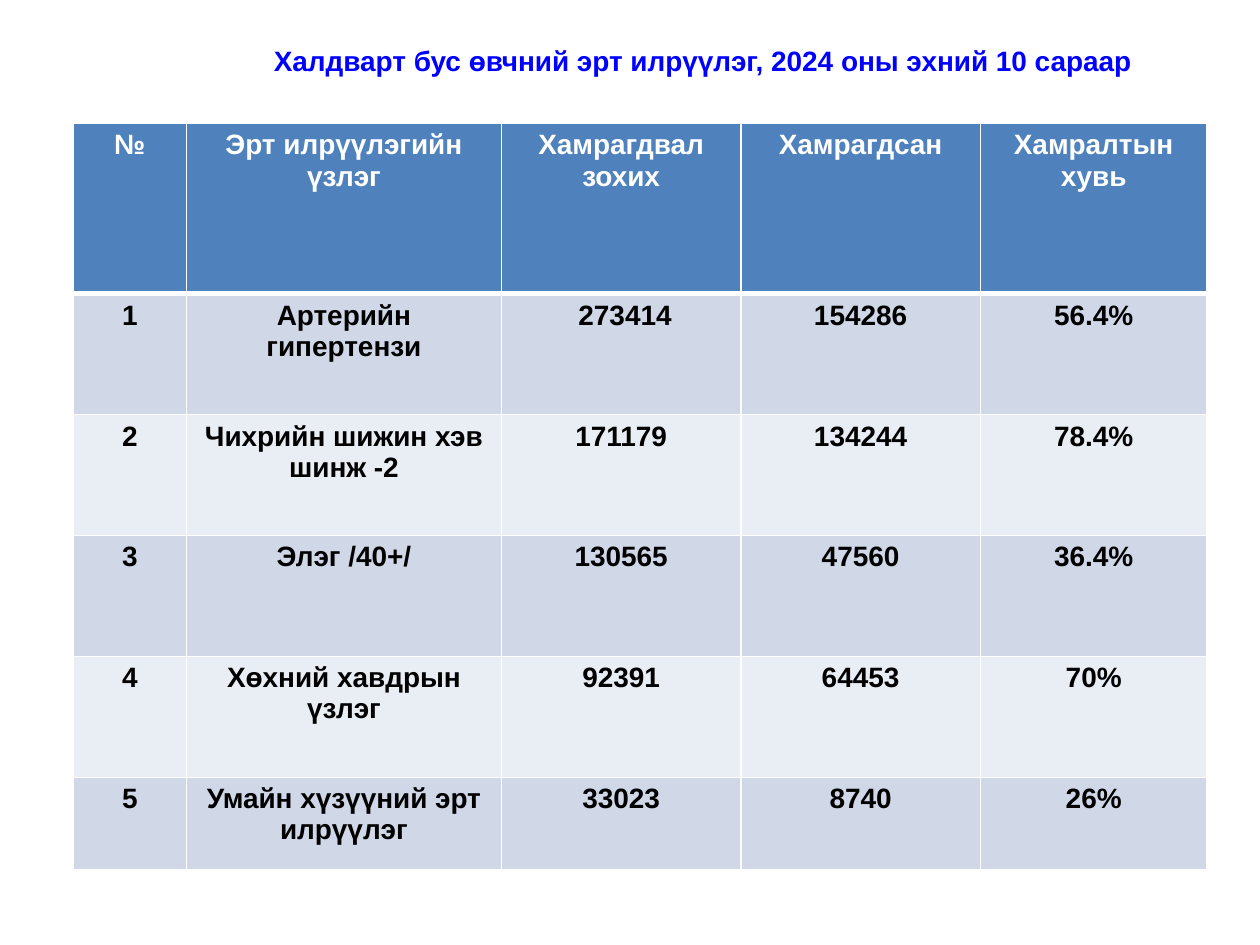
"""Build a slide with a table of early-detection screening coverage."""
from dataclasses import dataclass

from pptx import Presentation
from pptx.dml.color import RGBColor as Color
from pptx.enum.text import MSO_ANCHOR as Anchor, PP_ALIGN as Align
from pptx.oxml import parse_xml
from pptx.oxml.ns import nsdecls
from pptx.slide import Slide
from pptx.table import _Cell as Cell
from pptx.text.text import TextFrame
from pptx.util import Inches, Pt


@dataclass(frozen=True)
class Theme:
    font: str = "Arial"
    size: int = 16
    title: str = "0000FF"
    header_text: str = "FFFFFF"
    body_text: str = "000000"
    header_fill: str = "4F81BD"
    band_fills: tuple[str, str] = ("D0D8E8", "E9EDF4")
    border: str = "FFFFFF"
    border_width: int = 1
    header_rule_width: int = 3


@dataclass(frozen=True)
class Screening:
    name: str
    eligible: str
    screened: str
    coverage: str


THEME = Theme()
TITLE = "Халдварт бус өвчний эрт илрүүлэг, 2024 оны эхний 10 сараар"
HEADERS = ("№", "Эрт илрүүлэгийн үзлэг", "Хамрагдвал зохих", "Хамрагдсан", "Хамралтын хувь")
SCREENINGS = (
    Screening("Артерийн гипертензи", " 273414", "154286", "56.4%"),
    Screening("Чихрийн шижин хэв шинж -2", " 171179 ", "134244", "78.4%"),
    Screening("Элэг /40+/", "130565", "47560", "36.4%"),
    Screening("Хөхний хавдрын үзлэг", "92391", "64453", "70%"),
    Screening("Умайн хүзүүний эрт илрүүлэг", "33023", "8740", "26%"),
)
COLUMN_WIDTHS = (0.9, 2.5, 1.9, 1.9, 1.8)
ROW_HEIGHTS = (1.35, 0.96, 0.96, 0.96, 0.96, 0.73)


def write_text(frame: TextFrame, text: str, color: str) -> None:
    """Fill a text frame with one centred bold paragraph."""
    frame.text = text
    paragraph = frame.paragraphs[0]
    paragraph.alignment = Align.CENTER
    font = paragraph.font
    font.name, font.size, font.bold = THEME.font, Pt(THEME.size), True
    font.color.rgb = Color.from_string(color)


def add_borders(cell: Cell, top: int, bottom: int) -> None:
    """Outline a cell, with its top and bottom widths in points."""
    side = THEME.border_width
    properties = cell._tc.get_or_add_tcPr()
    for edge, width in (("L", side), ("R", side), ("T", top), ("B", bottom)):
        properties.append(parse_xml(
            f'<a:ln{edge} {nsdecls("a")} w="{Pt(width)}"><a:solidFill>'
            f'<a:srgbClr val="{THEME.border}"/></a:solidFill></a:ln{edge}>'
        ))


def draw_cell(cell: Cell, text: str, row: int) -> None:
    """Style one cell as header or banded body according to its row."""
    is_header = row == 0
    thin, thick = THEME.border_width, THEME.header_rule_width
    add_borders(cell, thick if row == 1 else thin, thick if is_header else thin)
    cell.fill.solid()
    fill = THEME.header_fill if is_header else THEME.band_fills[(row - 1) % 2]
    cell.fill.fore_color.rgb = Color.from_string(fill)
    write_text(cell.text_frame, text, THEME.header_text if is_header else THEME.body_text)


def add_title(slide: Slide) -> None:
    """Place and format the title placeholder."""
    title = slide.shapes.title
    title.left, title.top = Inches(1.08), Inches(-0.03)
    title.width, title.height = Inches(9), Inches(1.01)
    title.text_frame.vertical_anchor = Anchor.MIDDLE
    write_text(title.text_frame, TITLE, THEME.title)


def add_screening_table(slide: Slide) -> None:
    """Draw the header and one numbered row for each screening."""
    rows = [HEADERS] + [
        (str(number), item.name, item.eligible, item.screened, item.coverage)
        for number, item in enumerate(SCREENINGS, start=1)
    ]
    table = slide.shapes.add_table(
        len(rows), len(HEADERS), Inches(0.58), Inches(0.98),
        Inches(sum(COLUMN_WIDTHS)), Inches(sum(ROW_HEIGHTS)),
    ).table
    for column, width in zip(table.columns, COLUMN_WIDTHS):
        column.width = Inches(width)
    for row, height in zip(table.rows, ROW_HEIGHTS):
        row.height = Inches(height)
    for row_index, texts in enumerate(rows):
        for column_index, text in enumerate(texts):
            draw_cell(table.cell(row_index, column_index), text, row_index)


def main() -> None:
    """Create and save the presentation."""
    presentation = Presentation()
    presentation.slide_width, presentation.slide_height = Inches(10), Inches(7.5)
    slide = presentation.slides.add_slide(presentation.slide_layouts.get_by_name("Title Only"))
    add_title(slide)
    add_screening_table(slide)
    presentation.save("out.pptx")


if __name__ == "__main__":
    main()
